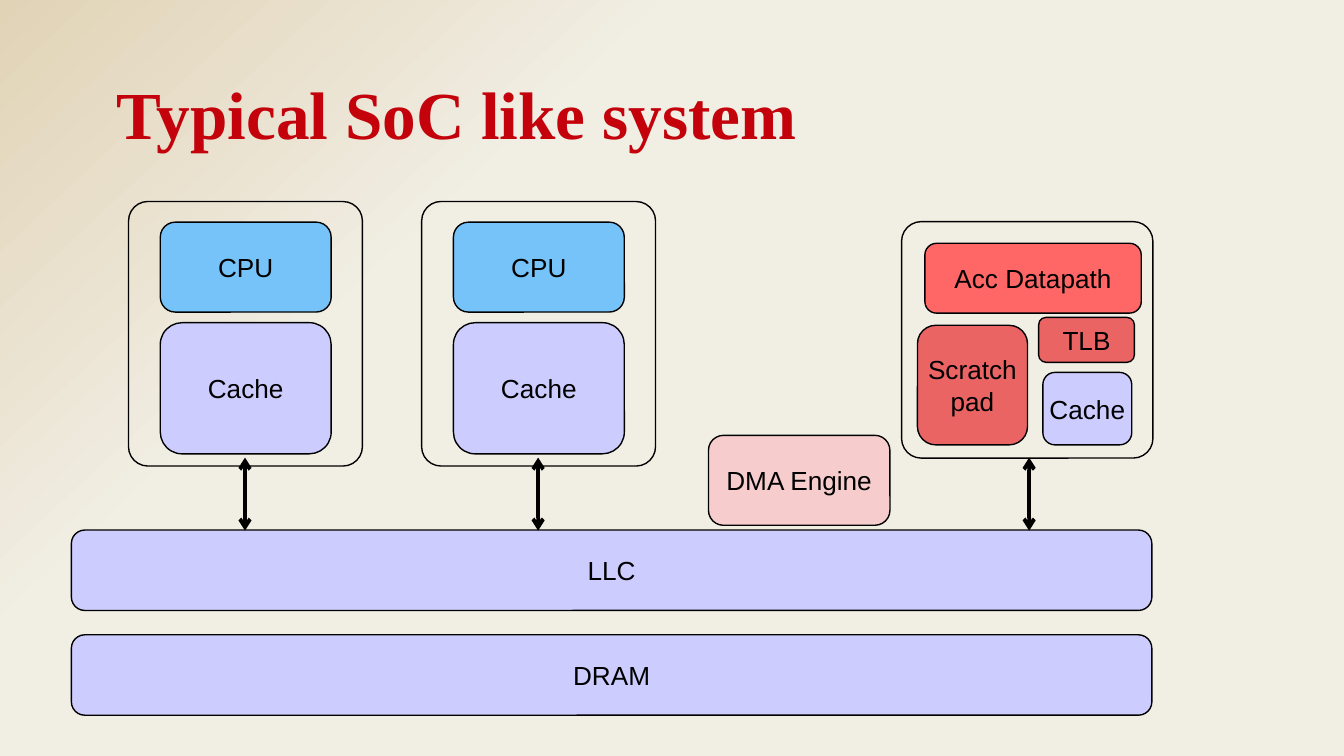
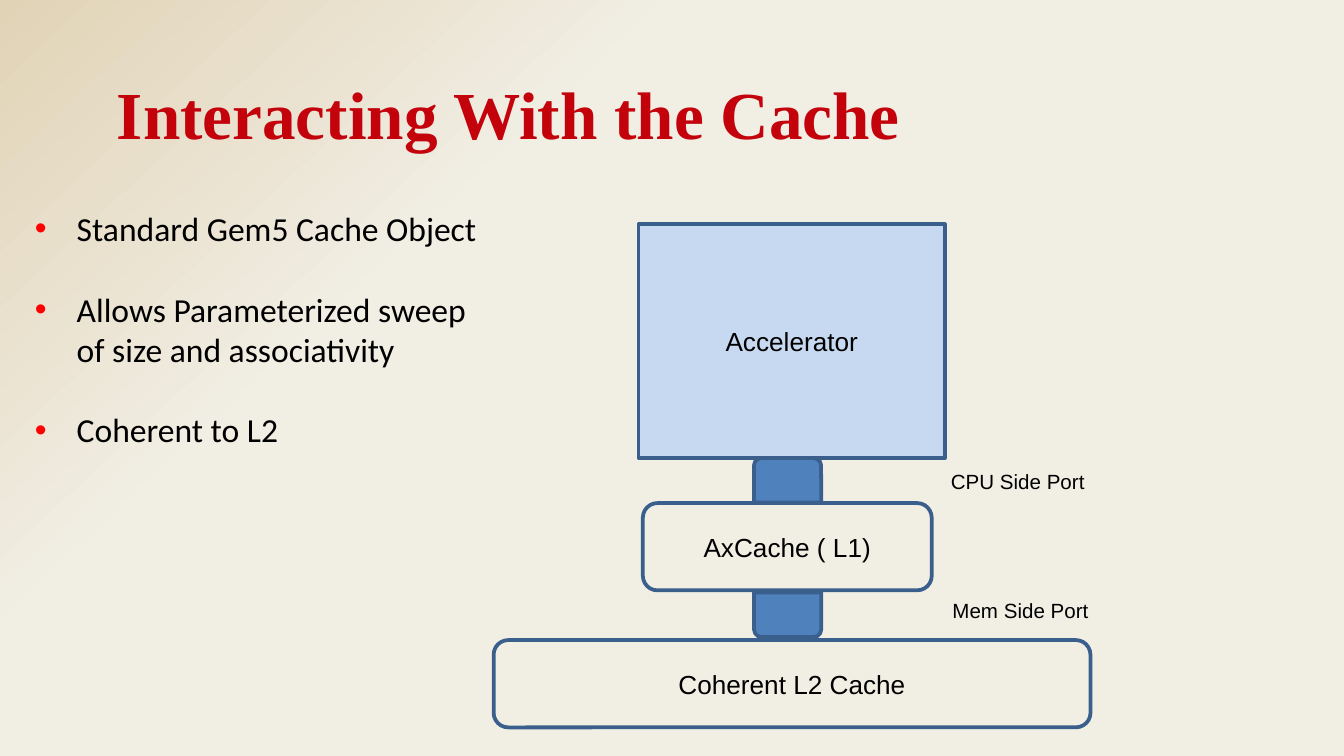
from lxml import etree
from pptx import Presentation
from pptx.dml.color import RGBColor as RGB
from pptx.enum.shapes import MSO_CONNECTOR as Line, MSO_SHAPE as Shape
from pptx.enum.text import MSO_ANCHOR as Anchor, MSO_AUTO_SIZE as AutoSize, PP_ALIGN as Align
from pptx.oxml.ns import qn
from pptx.util import Cm, Pt

COLORS = {
    "title": "C3020B", "black": "000000", "sand": "E1D3B6", "cream": "F1EEE4",
    "memory": "CCCCFF", "cpu": "76C3F9", "datapath": "FF6666", "local": "EA6464",
    "dma": "F6CCCC", "outline": "3A5F8C", "accelerator": "C6D9F1",
    "port": "4F81BD", "bullet": "FF0000",
}


def set_font(para, name, size, color="black", bold=False):
    para.font.name, para.font.size, para.font.bold = name, Pt(size), bold
    para.font.color.rgb = RGB.from_string(COLORS[color])


def add_box(page, kind, text, place, fill=None, outline="black", width=0.75, inset=0):
    box = page.shapes.add_shape(kind, *map(Cm, place))
    box.shadow.inherit = False
    if fill:
        box.fill.solid()
        box.fill.fore_color.rgb = RGB.from_string(COLORS[fill])
    else:
        box.fill.background()
    box.line.color.rgb = RGB.from_string(COLORS[outline])
    box.line.width = Pt(width)
    if text:
        frame = box.text_frame
        frame.word_wrap = True
        frame.vertical_anchor = Anchor.MIDDLE
        frame.margin_left = frame.margin_right = Cm(inset)
        frame.margin_top = frame.margin_bottom = Cm(inset / 2)
        para = frame.paragraphs[0]
        para.text, para.alignment = text, Align.CENTER
        set_font(para, "Arial", 14)
    return box


deck = Presentation()
deck.slide_width, deck.slide_height = Cm(25.4), Cm(14.29)

# Shared background gradient
master = deck.slide_master
master.background.fill.gradient()
gradient = master.element.find(".//" + qn("p:bg")).find(".//" + qn("a:gradFill"))
stops = gradient.find(qn("a:gsLst"))
for stop in list(stops):
    stops.remove(stop)
for position, name, alpha in ((0, "sand", 80), (32, "cream", 100), (100, "cream", 100)):
    stop = etree.SubElement(stops, qn("a:gs"), pos=str(position * 1000))
    color = etree.SubElement(stop, qn("a:srgbClr"), val=COLORS[name])
    if alpha < 100:
        etree.SubElement(color, qn("a:alpha"), val=str(alpha * 1000))
direction = gradient.find(qn("a:lin"))
direction.set("ang", str(47 * 60000))
direction.set("scaled", "0")

# Pages with their titles
pages = []
for text in ("Typical SoC like system", "Interacting With the Cache"):
    page = deck.slides.add_slide(deck.slide_layouts[5])
    title = page.shapes.title
    title.left, title.top, title.width, title.height = map(Cm, (1.96, 1.14, 19.84, 1.8))
    frame = title.text_frame
    frame.word_wrap, frame.auto_size = True, AutoSize.NONE
    frame.vertical_anchor = Anchor.BOTTOM
    frame.margin_left = frame.margin_right = Cm(0.25)
    frame.margin_top, frame.margin_bottom = 0, Cm(0.04)
    para = frame.paragraphs[0]
    para.text, para.alignment = text, Align.LEFT
    set_font(para, "Times New Roman", 36, "title", True)
    pages.append(page)
soc_page, cache_page = pages

# Slide 1: frames around the two cores and the accelerator
core_lefts = (2.43, 7.97)
frames = [(left, 3.81, 4.42, 5) for left in core_lefts] + [(17.04, 4.19, 4.75, 4.47)]
for place in frames:
    add_box(soc_page, Shape.ROUNDED_RECTANGLE, "", place).adjustments[0] = 0.083

# Slide 1: blocks
blocks = [
    ("DMA Engine", (13.39, 8.23, 3.43, 1.7), "dma"),
    ("Scratchpad", (17.34, 6.15, 2.08, 2.26), "local"),
    ("TLB", (19.63, 6, 1.81, 0.85), "local"),
    ("Cache", (19.71, 7.04, 1.68, 1.37), "memory"),
    ("Acc Datapath", (17.48, 4.6, 4.09, 1.32), "datapath"),
    ("LLC", (1.35, 10.02, 20.42, 1.52), "memory"),
    ("DRAM", (1.35, 12, 20.42, 1.52), "memory"),
]
for left in core_lefts:
    blocks.append(("CPU", (left + 0.6, 4.2, 3.23, 1.7), "cpu"))
    blocks.append(("Cache", (left + 0.6, 6.1, 3.23, 2.48), "memory"))
for text, place, fill in blocks:
    add_box(soc_page, Shape.ROUNDED_RECTANGLE, text, place, fill)

# Slide 1: two-way arrows down to the LLC
for x in [left + 2.2 for left in core_lefts] + [19.45]:
    arrow = soc_page.shapes.add_connector(Line.STRAIGHT, Cm(x), Cm(8.65), Cm(x), Cm(10.03))
    arrow.line.color.rgb = RGB.from_string(COLORS["black"])
    arrow.line.width = Pt(2)
    properties = arrow.element.spPr
    for end in ("a:headEnd", "a:tailEnd"):
        etree.SubElement(properties.find(qn("a:ln")), qn(end), type="arrow")
    etree.SubElement(properties, qn("a:effectLst"))

# Slide 2: cache hierarchy and the ports between its levels
for kind, text, place, fill, turn in (
    (Shape.RECTANGLE, "Accelerator", (12.07, 4.24, 5.79, 4.42), "accelerator", 0),
    (Shape.ROUNDED_RECTANGLE, "AxCache ( L1)", (12.15, 9.51, 5.46, 1.65), None, 0),
    (Shape.ROUND_2_SAME_RECTANGLE, "", (14.25, 8.66, 1.27, 0.84), "port", 0),
    (Shape.ROUND_2_SAME_RECTANGLE, "", (14.25, 11.2, 1.27, 0.84), "port", 180),
    (Shape.ROUNDED_RECTANGLE, "Coherent L2 Cache", (9.33, 12.1, 11.28, 1.65), None, 0),
):
    box = add_box(cache_page, kind, text, place, fill, "outline", 2, 0.25)
    box.rotation = turn

# Slide 2: port labels, each on one line
for text, left, top in (("CPU Side Port", 17.72, 8.74), ("Mem Side Port", 17.75, 11.18)):
    label = cache_page.shapes.add_textbox(Cm(left), Cm(top), Cm(3.07), Cm(0.74))
    frame = label.text_frame
    frame.word_wrap, frame.margin_right = True, 0
    para = frame.paragraphs[0]
    para.text = text
    set_font(para, "Arial", 11)

# Slide 2: bullet list
points = cache_page.shapes.add_textbox(Cm(0.41), Cm(3.81), Cm(9.19), Cm(4.88))
frame = points.text_frame
frame.word_wrap = True
for index, text in enumerate((
    "Standard Gem5 Cache Object",
    "Allows Parameterized sweep\vof size and associativity",
    "Coherent to L2",
)):
    para = frame.add_paragraph() if index else frame.paragraphs[0]
    para.text = text
    if index:
        para.space_before = Pt(21.5)
    properties = para._p.get_or_add_pPr()
    properties.set("marL", str(Cm(0.79)))
    properties.set("indent", str(-Cm(0.79)))
    bullet_color = etree.SubElement(properties, qn("a:buClr"))
    etree.SubElement(bullet_color, qn("a:srgbClr"), val=COLORS["bullet"])
    etree.SubElement(properties, qn("a:buFont"), typeface="Arial")
    etree.SubElement(properties, qn("a:buChar"), char="•")
    set_font(para, "Calibri", 18)

deck.save("out.pptx")
